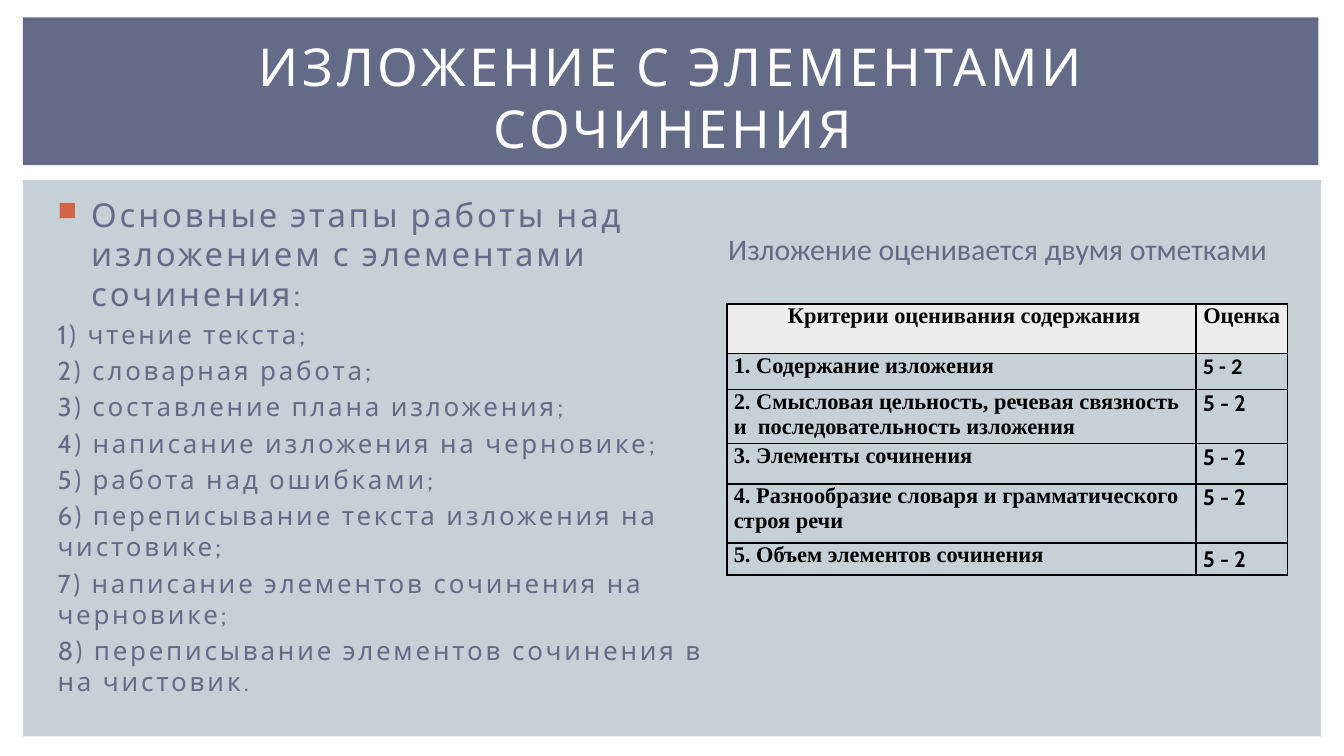
from lxml.etree import SubElement
from pptx import Presentation
from pptx.dml.color import RGBColor
from pptx.enum.shapes import MSO_SHAPE
from pptx.enum.text import MSO_ANCHOR, PP_ALIGN
from pptx.oxml.ns import qn
from pptx.util import Inches, Pt

COLORS = {
    "panel": "C5D1D7",
    "slate": "646B86",
    "bullet": "D16349",
    "header": "EDEDED",
    "white": "FFFFFF",
    "black": "000000",
}
STAGES = [
    "чтение текста;",
    "словарная работа;",
    "составление плана изложения;",
    "написание изложения на черновике;",
    "работа над ошибками;",
    "переписывание текста изложения на чистовике;",
    "написание элементов сочинения на черновике;",
    "переписывание элементов сочинения в на чистовик.",
]
CRITERIA = [
    "Содержание изложения",
    "Смысловая цельность, речевая связность и  последовательность изложения",
    "Элементы сочинения",
    "Разнообразие словаря и грамматического строя речи",
    "Объем элементов сочинения",
]
SERIF = "Times New Roman"


def rgb(name):
    return RGBColor.from_string(COLORS[name])


class SlideBuilder:
    def __init__(self, slide, font="Cabin"):
        self.slide = slide
        self.font = font

    def format_runs(self, paragraph, size, color, font=None, bold=False, spacing=0):
        for run in paragraph.runs:
            run.font.name = font or self.font
            run.font.size = Pt(size)
            run.font.bold = bold
            run.font.color.rgb = rgb(color)
            if spacing:
                run._r.get_or_add_rPr().set("spc", str(int(spacing * 100)))

    def band(self, left, top, width, height, color):
        shape = self.slide.shapes.add_shape(
            MSO_SHAPE.RECTANGLE, Inches(left), Inches(top), Inches(width), Inches(height))
        shape.shadow.inherit = False
        shape.fill.solid()
        shape.fill.fore_color.rgb = rgb(color)
        shape.line.fill.background()

    def text_box(self, left, top, width, height, text, wrap=True):
        shape = self.slide.shapes.add_textbox(
            Inches(left), Inches(top), Inches(width), Inches(height))
        text_frame = shape.text_frame
        text_frame.word_wrap = wrap
        text_frame.text = text
        return text_frame

    def indent(self, paragraph, left, first_line, bullet=None):
        properties = paragraph._p.get_or_add_pPr()
        properties.set("marL", str(Inches(left)))
        properties.set("indent", str(Inches(first_line)))
        if bullet:
            color = SubElement(properties, qn("a:buClr"))
            SubElement(color, qn("a:srgbClr"), val=COLORS["bullet"])
            SubElement(properties, qn("a:buSzPct"), val="80000")
            SubElement(properties, qn("a:buChar"), char=bullet)

    def cell(self, cell, text, font, centered=False, fill=None):
        cell.margin_left = cell.margin_right = Inches(0.05)
        cell.margin_top = cell.margin_bottom = 0
        cell.text_frame.text = text
        paragraph = cell.text_frame.paragraphs[0]
        paragraph.alignment = PP_ALIGN.CENTER if centered else PP_ALIGN.LEFT
        self.format_runs(paragraph, 12, "black", font, bold=True)
        properties = cell._tc.get_or_add_tcPr()
        for side in ("a:lnL", "a:lnR", "a:lnT", "a:lnB"):
            line = SubElement(properties, qn(side), w=str(Pt(1)))
            line_fill = SubElement(line, qn("a:solidFill"))
            SubElement(line_fill, qn("a:srgbClr"), val=COLORS["black"])
        if fill:
            cell.fill.solid()
            cell.fill.fore_color.rgb = rgb(fill)
        else:
            cell.fill.background()

    def table(self, left, top, widths, heights):
        table = self.slide.shapes.add_table(
            len(heights), len(widths), Inches(left), Inches(top),
            Inches(sum(widths)), Inches(sum(heights))).table
        for column, width in zip(table.columns, widths):
            column.width = Inches(width)
        for row, height in zip(table.rows, heights):
            row.height = Inches(height)
        return table


def main():
    presentation = Presentation()
    presentation.slide_width = Inches(10)
    presentation.slide_height = Inches(10 * 9 / 16)
    builder = SlideBuilder(presentation.slides.add_slide(presentation.slide_layouts[6]))

    builder.band(0.17, 1.34, 9.66, 4.14, "panel")
    builder.band(0.17, 0.13, 9.64, 1.1, "slate")

    title = builder.text_box(0.42, 0.29, 9.17, 0.86, "ИЗЛОЖЕНИЕ С ЭЛЕМЕНТАМИ СОЧИНЕНИЯ")
    title.margin_left = title.margin_right = Inches(0.3)
    title.vertical_anchor = MSO_ANCHOR.MIDDLE
    paragraph = title.paragraphs[0]
    paragraph.alignment = PP_ALIGN.CENTER
    builder.format_runs(paragraph, 28, "white", spacing=2)

    heading = "Основные этапы работы над изложением с элементами сочинения:"
    steps = [f"{number}) {stage}" for number, stage in enumerate(STAGES, 1)]
    body = builder.text_box(0.28, 1.4, 5.35, 3.94, "\n".join([heading, *steps]))
    body.margin_right = Inches(0.2)
    for index, paragraph in enumerate(body.paragraphs):
        size = 13.9 if index else 17.6
        paragraph.space_before = Pt(2.8 if index else 0)
        if index:
            builder.indent(paragraph, 0.05, 0)
        else:
            builder.indent(paragraph, 0.3, -0.25, "■")
        builder.format_runs(paragraph, size, "slate", spacing=1.5)

    table = builder.table(5.41, 2.26, [3.49, 0.68], [0.37, 0.27, 0.4, 0.3, 0.44, 0.24])
    for column, text in enumerate([" Критерии оценивания содержания", "Оценка"]):
        builder.cell(table.cell(0, column), text, SERIF, centered=True, fill="header")
    for row, criterion in enumerate(CRITERIA, 1):
        builder.cell(table.cell(row, 0), f"{row}. {criterion}", SERIF)
        builder.cell(table.cell(row, 1), "5 - 2", "Calibri" if row == 1 else "Cabin")
    table.cell(len(CRITERIA), 1).vertical_anchor = MSO_ANCHOR.MIDDLE

    caption = builder.text_box(
        5.32, 1.63, 4.27, 0.39, "Изложение оценивается двумя отметками", wrap=False)
    caption.paragraphs[0].line_spacing = 1.15
    builder.format_runs(caption.paragraphs[0], 16, "slate", "Calibri")

    presentation.save("out.pptx")


if __name__ == "__main__":
    main()
